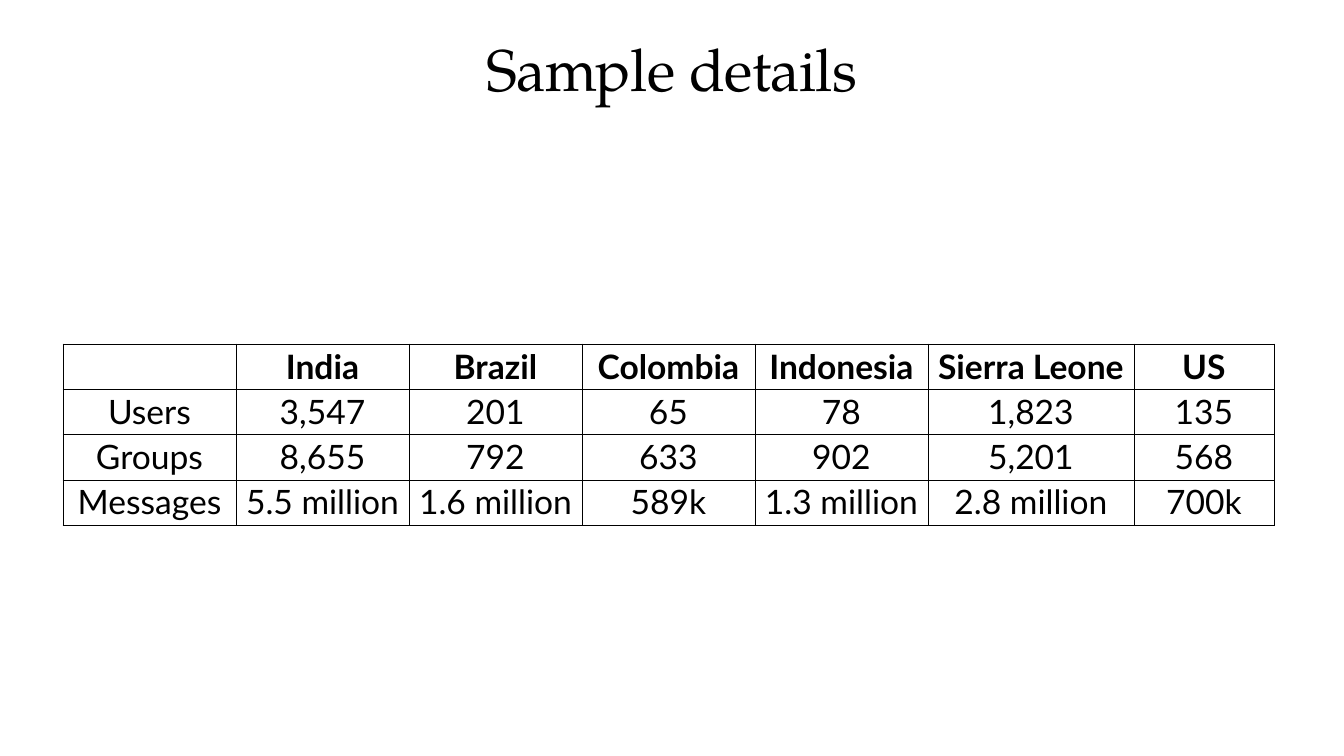
import pptx
import pptx.util
import pptx.dml.color
import pptx.enum.text
import pptx.oxml
from dataclasses import dataclass
from pptx.oxml.ns import qn, nsdecls

Pt = pptx.util.Pt
ANCHOR = pptx.enum.text.MSO_ANCHOR
CENTER = pptx.enum.text.PP_ALIGN.CENTER


@dataclass
class Theme:
    ink: str = "000000"
    paper: str = "FFFFFF"
    head_font: str = "TeX Gyre Pagella"
    body_font: str = "Lato"
    head_size: int = 84
    body_size: int = 48
    rule: int = 1


def px(count):
    return round(count * 914400 / 50.4)


class Deck:
    def __init__(self, theme, wide, high):
        self.theme = theme
        self.file = pptx.Presentation()
        self.file.slide_width, self.file.slide_height = px(wide), px(high)
        self.slide = self.file.slides.add_slide(self.file.slide_layouts[6])
        fill = self.slide.background.fill
        fill.solid()
        fill.fore_color.rgb = pptx.dml.color.RGBColor.from_string(theme.paper)

    def label(self, frame, text, spacing, **style):
        para = frame.paragraphs[0]
        para.alignment, para.line_spacing = CENTER, spacing
        run = para.add_run()
        run.text = text
        for name, value in style.items():
            setattr(run.font, name, value)
        run.font.color.rgb = pptx.dml.color.RGBColor.from_string(self.theme.ink)
        return run

    def title(self, text, left, top, wide, high):
        box = self.slide.shapes.add_textbox(px(left), px(top), px(wide), px(high))
        frame = box.text_frame
        look = {"word_wrap": True, "vertical_anchor": ANCHOR.TOP,
                "margin_left": px(3), "margin_right": px(3),
                "margin_top": px(3), "margin_bottom": px(3)}
        for name, value in look.items():
            setattr(frame, name, value)
        run = self.label(frame, text, 0.8, name=self.theme.head_font,
                         size=Pt(self.theme.head_size))
        run._r.find(qn("a:rPr")).set("spc", "-80")

    def border(self, cell):
        props = cell._tc.get_or_add_tcPr()
        for spot, side in enumerate(("lnL", "lnR", "lnT", "lnB")):
            props.insert(spot, pptx.oxml.parse_xml(
                f'<a:{side} {nsdecls("a")} w="{Pt(self.theme.rule)}"><a:solidFill>'
                f'<a:srgbClr val="{self.theme.ink}"/></a:solidFill></a:{side}>'))

    def table(self, rows, left, top, widths, high):
        shape = self.slide.shapes.add_table(
            len(rows), len(widths), px(left), px(top),
            px(sum(widths)), px(high * len(rows)))
        grid = shape.table
        grid.horz_banding = False
        for col, wide in zip(grid.columns, widths):
            col.width = px(wide)
        look = {"margin_left": px(5), "margin_right": px(5),
                "margin_top": px(6), "margin_bottom": px(3),
                "vertical_anchor": ANCHOR.MIDDLE}
        for r, row in enumerate(rows):
            grid.rows[r].height = px(high)
            for c, text in enumerate(row):
                cell = grid.cell(r, c)
                for name, value in look.items():
                    setattr(cell, name, value)
                cell.fill.background()
                self.border(cell)
                if text:
                    self.label(cell.text_frame, text, 0.9, bold=r == 0,
                               name=self.theme.body_font,
                               size=Pt(self.theme.body_size))


def main():
    deck = Deck(Theme(), 1344, 756)

    # Heading
    deck.title("Sample details", 67, 43, 1210, 95)

    # Sample counts by country
    rows = [
        ["", "India", "Brazil", "Colombia", "Indonesia", "Sierra Leone", "US"],
        ["Users", "3,547", "201", "65", "78", "1,823", "135"],
        ["Groups", "8,655", "792", "633", "902", "5,201", "568"],
        ["Messages", "5.5 million", "1.6 million", "589k", "1.3 million",
         "2.8 million", "700k"],
    ]
    deck.table(rows, 63, 344, [173] * 5 + [206, 140], 45)

    deck.file.save("out.pptx")


if __name__ == "__main__":
    main()
